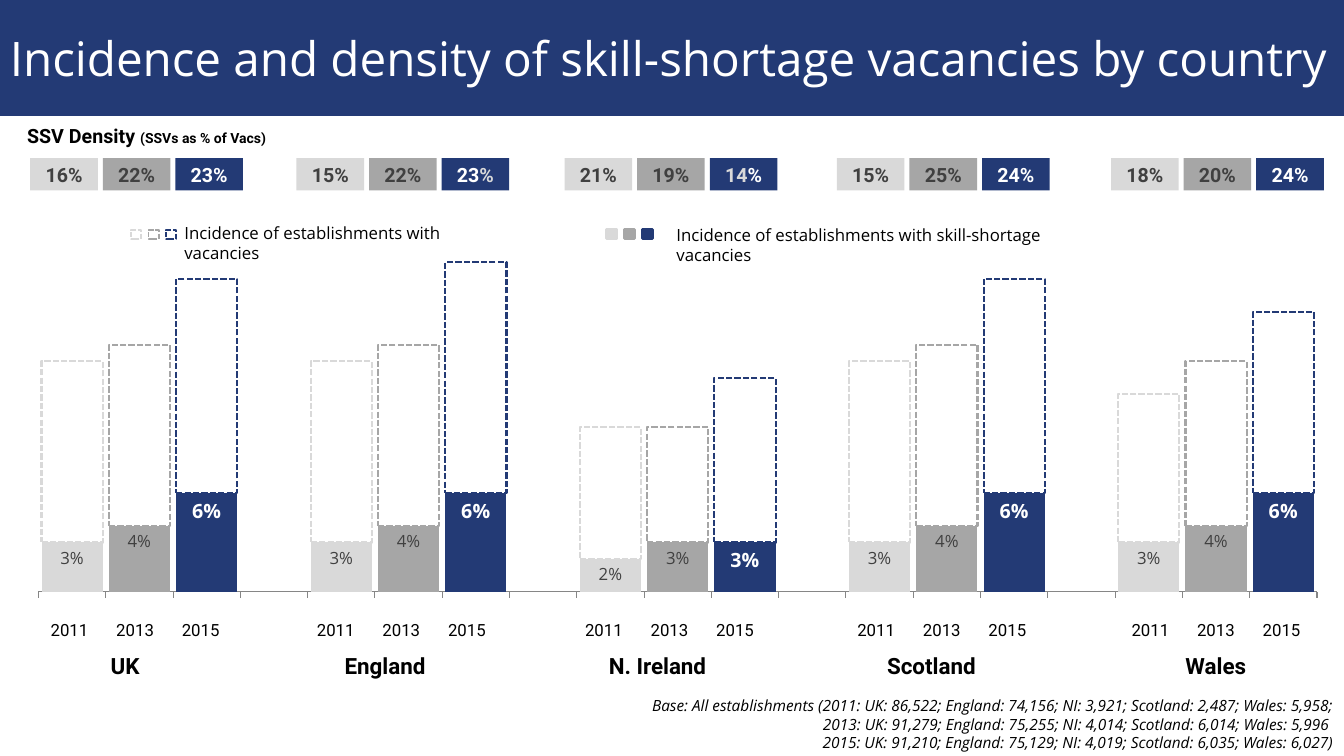
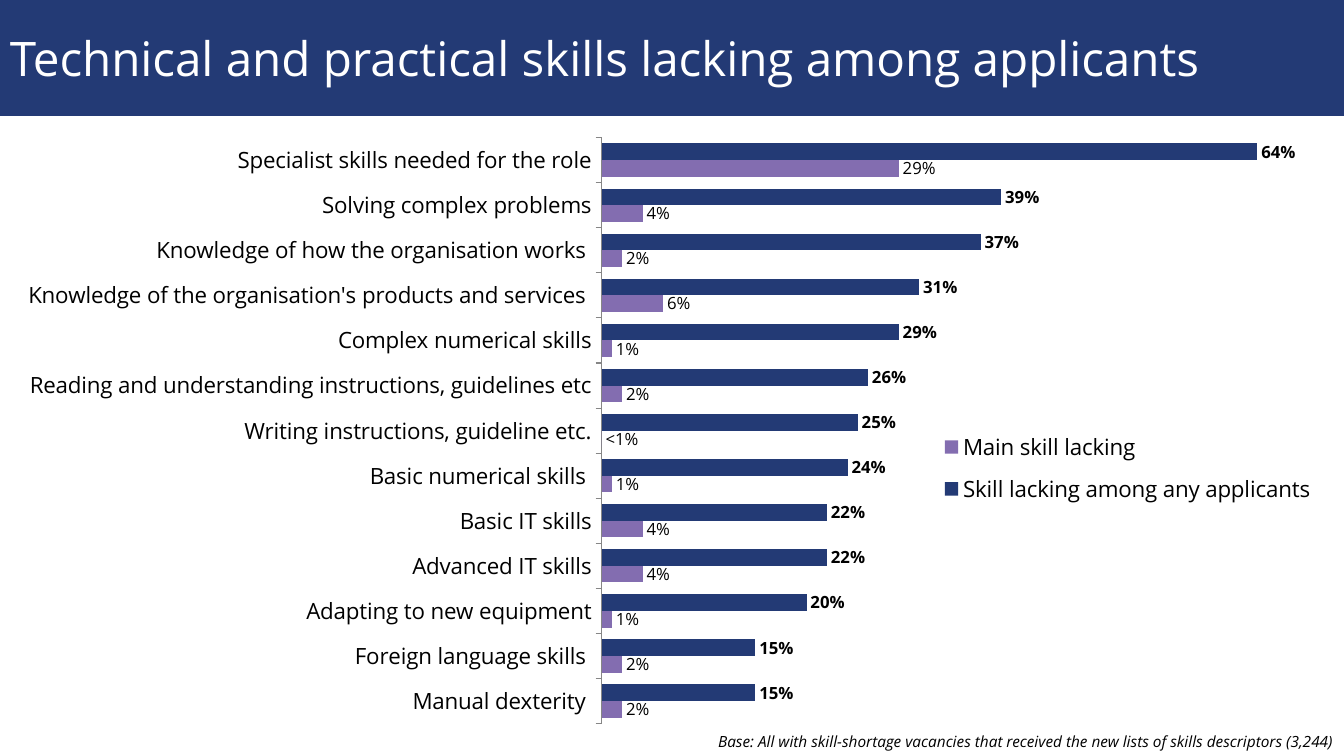
from dataclasses import dataclass

from pptx import Presentation
from pptx.chart.data import CategoryChartData as ChartData
from pptx.dml.color import RGBColor
from pptx.enum.chart import XL_CHART_TYPE as Kind
from pptx.enum.chart import XL_LABEL_POSITION as Spot
from pptx.enum.chart import XL_LEGEND_POSITION as Side
from pptx.enum.chart import XL_TICK_LABEL_POSITION as Ticks
from pptx.enum.chart import XL_TICK_MARK as Mark
from pptx.enum.dml import MSO_LINE as Dash
from pptx.enum.shapes import MSO_SHAPE as Form
from pptx.enum.text import MSO_ANCHOR as Anchor
from pptx.enum.text import PP_ALIGN as Align
from pptx.oxml import parse_xml
from pptx.oxml.ns import nsdecls
from pptx.util import Inches, Pt

WIDE, HIGH = 13.33, 7.5
NAVY, MID, PALE, PLUM = "233A75", "A6A6A6", "D9D9D9", "836DB0"
WHITE, BLACK, DARK, RULE = "FFFFFF", "000000", "404040", "868686"
SANS, ROBOTO = "Open Sans", "Roboto"
YEARS = {"2011": PALE, "2013": MID, "2015": NAVY}


@dataclass(frozen=True)
class Box:
    """A place on the slide, in percent of its width and height."""
    left: float
    top: float
    wide: float
    high: float

    def emu(self) -> tuple:
        return (Inches(self.left * WIDE / 100), Inches(self.top * HIGH / 100),
                Inches(self.wide * WIDE / 100), Inches(self.high * HIGH / 100))


@dataclass(frozen=True)
class Style:
    size: float
    face: str = SANS
    color: str = BLACK
    bold: bool = False
    slant: bool = False
    align: Align = Align.LEFT


@dataclass(frozen=True)
class Run:
    text: str
    size: float = 0
    color: str = ""


@dataclass(frozen=True)
class Land:
    name: str
    left: float        # first density box
    label: float       # country name
    share: tuple       # vacancies that are hard to fill, percent
    short: tuple       # lower bars, percent
    rest: tuple        # upper bars, percent
    num: str = WHITE   # colours of the 2015 figure and its sign
    sign: str = WHITE


LANDS = [
    Land("UK", 2.25, 7.5, (16, 22, 23), (3, 4, 6), (11, 11, 13)),
    Land("England", 22.06, 24.91, (15, 22, 23), (3, 4, 6), (11, 11, 14),
         sign=PALE),
    Land("N. Ireland", 42.01, 44.56, (21, 19, 14), (2, 3, 3), (8, 7, 10),
         num=PALE),
    Land("Scotland", 62.27, 65.27, (15, 25, 24), (3, 4, 6), (11, 11, 13)),
    Land("Wales", 82.67, 87.47, (18, 20, 24), (3, 4, 6), (9, 10, 11)),
]

# Skill, lacking among any applicants, main skill lacking
SKILLS = [
    ("Specialist skills needed for the role", 64, 29),
    ("Solving complex problems", 39, 4),
    ("Knowledge of how the organisation works ", 37, 2),
    ("Knowledge of the organisation's products and services ", 31, 6),
    ("Complex numerical skills", 29, 1),
    ("Reading and understanding instructions, guidelines etc", 26, 2),
    ("Writing instructions, guideline etc.", 25, 0),
    ("Basic numerical skills ", 24, 1),
    ("Basic IT skills", 22, 4),
    ("Advanced IT skills", 22, 4),
    ("Adapting to new equipment", 20, 1),
    ("Foreign language skills ", 15, 2),
    ("Manual dexterity ", 15, 2),
]

TITLE = Style(34, color=WHITE)
HEAD = Style(14, ROBOTO, bold=True)
YEAR = Style(12, ROBOTO)
NAME = Style(16, ROBOTO, bold=True)
KEY = Style(12)
NOTE = Style(11, slant=True, align=Align.RIGHT)
SHARE = Style(14, ROBOTO, DARK, bold=True, align=Align.CENTER)


# Shared helpers
def rgb(code: str) -> RGBColor:
    return RGBColor.from_string(code)


def paint(part, color: str) -> None:
    part.fill.solid()
    part.fill.fore_color.rgb = rgb(color)


def edge(line, color: str, size: float, dash=None) -> None:
    line.color.rgb = rgb(color)
    line.width = Pt(size)
    if dash:
        line.dash_style = dash


def ink(font, style: Style) -> None:
    font.size, font.name = Pt(style.size), style.face
    font.bold, font.italic = style.bold, style.slant
    font.color.rgb = rgb(style.color)


def write(shape, style: Style, *lines) -> None:
    """Each line is a string or a list of runs."""
    frame = shape.text_frame
    frame.word_wrap = True
    for i, line in enumerate(lines):
        para = frame.add_paragraph() if i else frame.paragraphs[0]
        para.alignment = style.align
        ink(para.font, style)
        for part in [Run(line)] if isinstance(line, str) else line:
            run = para.add_run()
            run.text = part.text
            if part.size:
                run.font.size = Pt(part.size)
            if part.color:
                run.font.color.rgb = rgb(part.color)


def label(slide, box: Box, style: Style, *lines) -> None:
    write(slide.shapes.add_textbox(*box.emu()), style, *lines)


def block(slide, box: Box, color: str):
    shape = slide.shapes.add_shape(Form.RECTANGLE, *box.emu())
    shape.shadow.inherit = False
    paint(shape, color)
    shape.line.fill.background()
    return shape


def start(deck, title: str):
    """New blank slide with the title band."""
    slide = deck.slides.add_slide(deck.slide_layouts[6])
    band = block(slide, Box(0, 0, 100, 15.33), NAVY)
    band.text_frame.vertical_anchor = Anchor.MIDDLE
    write(band, TITLE, title)
    return slide


# Chart helpers
def layout(box: Box, inner: bool = False):
    target = '<c:layoutTarget val="inner"/>' if inner else ""
    return parse_xml(
        f'<c:layout {nsdecls("c")}><c:manualLayout>{target}'
        '<c:xMode val="edge"/><c:yMode val="edge"/>'
        f'<c:x val="{box.left / 100}"/><c:y val="{box.top / 100}"/>'
        f'<c:w val="{box.wide / 100}"/><c:h val="{box.high / 100}"/>'
        '</c:manualLayout></c:layout>')


def graph(slide, kind, box: Box, plot: Box, cats, rows, top: float, gap: int):
    data = ChartData(number_format="0%")
    data.categories = cats
    for name, vals in rows:
        data.add_series(name, [None if v is None else v / 100 for v in vals])
    chart = slide.shapes.add_chart(kind, *box.emu(), data).chart
    chart.has_title = chart.has_legend = False
    ink(chart.font, Style(18))
    area = chart._chartSpace.xpath("c:chart/c:plotArea")[0]
    for old in area.xpath("c:layout"):
        area.remove(old)
    area.insert(0, layout(plot, True))
    bars = chart.plots[0]
    bars.gap_width, bars.vary_by_categories = gap, False
    axis = chart.value_axis
    axis.visible = axis.has_major_gridlines = False
    axis.minimum_scale, axis.maximum_scale = 0, top
    axis = chart.category_axis
    axis.has_major_gridlines = False
    axis.major_tick_mark, axis.minor_tick_mark = Mark.OUTSIDE, Mark.NONE
    edge(axis.format.line, RULE, 0.75)
    return chart


def tag(series, style: Style, spot) -> None:
    tags = series.data_labels
    tags.show_value = True
    tags.number_format, tags.number_format_is_linked = "0%", False
    tags.position = spot
    ink(tags.font, style)


# Slide 1: vacancies by country
def column(lands, field: str) -> list:
    """Three bars a country, with an empty slot between countries."""
    return [v for land in lands for v in (*getattr(land, field), None)][:-1]


def stacks(slide) -> None:
    short, rest = column(LANDS, "short"), column(LANDS, "rest")
    chart = graph(slide, Kind.COLUMN_STACKED, Box(0, 20.4, 98.72, 74.53),
                  Box(2.9, 4.6, 96.37, 73.1),
                  [str(i + 1) for i in range(len(short))],
                  [("Series 1", short), ("Series 2", rest)], 0.25, 10)
    chart.plots[0].overlap = 100
    chart.category_axis.tick_label_position = Ticks.NONE
    low, high = chart.plots[0].series
    paint(low.format, NAVY)
    paint(high.format, WHITE)
    tag(low, Style(12, color=DARK), Spot.INSIDE_END)
    tones = list(YEARS.values())
    for i, val in enumerate(short):
        if val is None:
            continue
        tone = tones[i % 4]
        paint(low.points[i].format, tone)
        paint(high.points[i].format, WHITE)
        edge(high.points[i].format.line, tone, 1.5, Dash.SQUARE_DOT)
        if tone == NAVY:
            mark = low.points[i].data_label
            ink(mark.font, Style(14, color=WHITE, bold=True))
            mark.position = Spot.INSIDE_END


def country(slide, land: Land) -> None:
    for i, (year, tone) in enumerate(YEARS.items()):
        share = block(slide, Box(land.left + i * 5.4, 20.93, 5.03, 4.27), tone)
        frame = share.text_frame
        frame.margin_left = frame.margin_right = 0
        frame.margin_top = frame.margin_bottom = Inches(0.04)
        num, sign = (land.num, land.sign) if tone == NAVY else ("", "")
        write(share, SHARE,
              [Run(str(land.share[i]), color=num), Run("%", color=sign)])
        label(slide, Box(land.left + 0.78 + i * 4.88, 81.33, 4.7, 4), YEAR, year)
    label(slide, Box(land.label, 85.6, 10.13, 4.93), NAME, land.name)


def key(slide, left: float, solid: bool) -> None:
    for i, tone in enumerate(YEARS.values()):
        spot = block(slide, Box(left + i * 1.31, 30.4, 0.75, 1.2),
                     tone if solid else WHITE)
        edge(spot.line, tone, 2 if solid else 1.25,
             None if solid else Dash.SQUARE_DOT)


def density(deck) -> None:
    slide = start(deck, "Incidence and density of skill-shortage vacancies by country")
    stacks(slide)
    label(slide, Box(1.28, 15.73, 23.26, 4.53), HEAD,
          [Run("SSV Density "), Run("(SSVs as % of Vacs)", 10)])
    for land in LANDS:
        country(slide, land)
    key(slide, 9.75, False)
    label(slide, Box(12.98, 28.8, 24, 4), KEY,
          "Incidence of establishments with vacancies")
    key(slide, 45.16, True)
    label(slide, Box(49.59, 29.07, 32, 4), KEY,
          "Incidence of establishments with skill-shortage vacancies")
    label(slide, Box(28.2, 91.47, 71.8, 8.53), NOTE,
          "Base: All establishments (2011: UK: 86,522; England: 74,156; "
          "NI: 3,921; Scotland: 2,487; Wales: 5,958;",
          "2013: UK: 91,279; England: 75,255; NI: 4,014; Scotland: 6,014; "
          "Wales: 5,996 ",
          "2015: UK: 91,210; England: 75,129; NI: 4,019; Scotland: 6,035; "
          "Wales: 6,027)")


# Slide 2: skills lacking
def skills(deck) -> None:
    slide = start(deck, "Technical and practical skills lacking among applicants")
    cats, most, main = zip(*SKILLS)
    chart = graph(slide, Kind.BAR_CLUSTERED, Box(2.1, 15.33, 97.9, 84.67),
                  Box(43.4, 3.39, 54.7, 91.58), cats,
                  [("Skill lacking among any applicants", most),
                   ("Main skill lacking ", main)], 0.7, 71)
    chart.category_axis.reverse_order = True
    ink(chart.category_axis.tick_labels.font, Style(16))
    for series, tone in zip(chart.plots[0].series, (NAVY, PLUM)):
        paint(series.format, tone)
        tag(series, Style(12, bold=tone == NAVY), Spot.OUTSIDE_END)
    tiny = chart.plots[0].series[1].points[main.index(0)].data_label
    tiny.text_frame.text = "<1%"
    ink(tiny.text_frame.paragraphs[0].runs[0].font, Style(12))
    tiny.position = Spot.OUTSIDE_END
    chart.has_legend = True
    legend = chart.legend
    legend.position, legend.include_in_layout = Side.RIGHT, True
    ink(legend.font, Style(16))
    root = legend._element
    for old in root.xpath("c:layout"):
        root.remove(old)
    root.xpath("c:legendPos")[0].addnext(layout(Box(68.5, 47.5, 30, 15)))
    label(slide, Box(39.83, 96.13, 60.17, 3.87), NOTE,
          "Base: All with skill-shortage vacancies that received the new "
          "lists of skills descriptors (3,244)")


def main() -> None:
    deck = Presentation()
    deck.slide_width, deck.slide_height = Inches(WIDE), Inches(HIGH)
    density(deck)
    skills(deck)
    deck.save("out.pptx")


if __name__ == "__main__":
    main()
